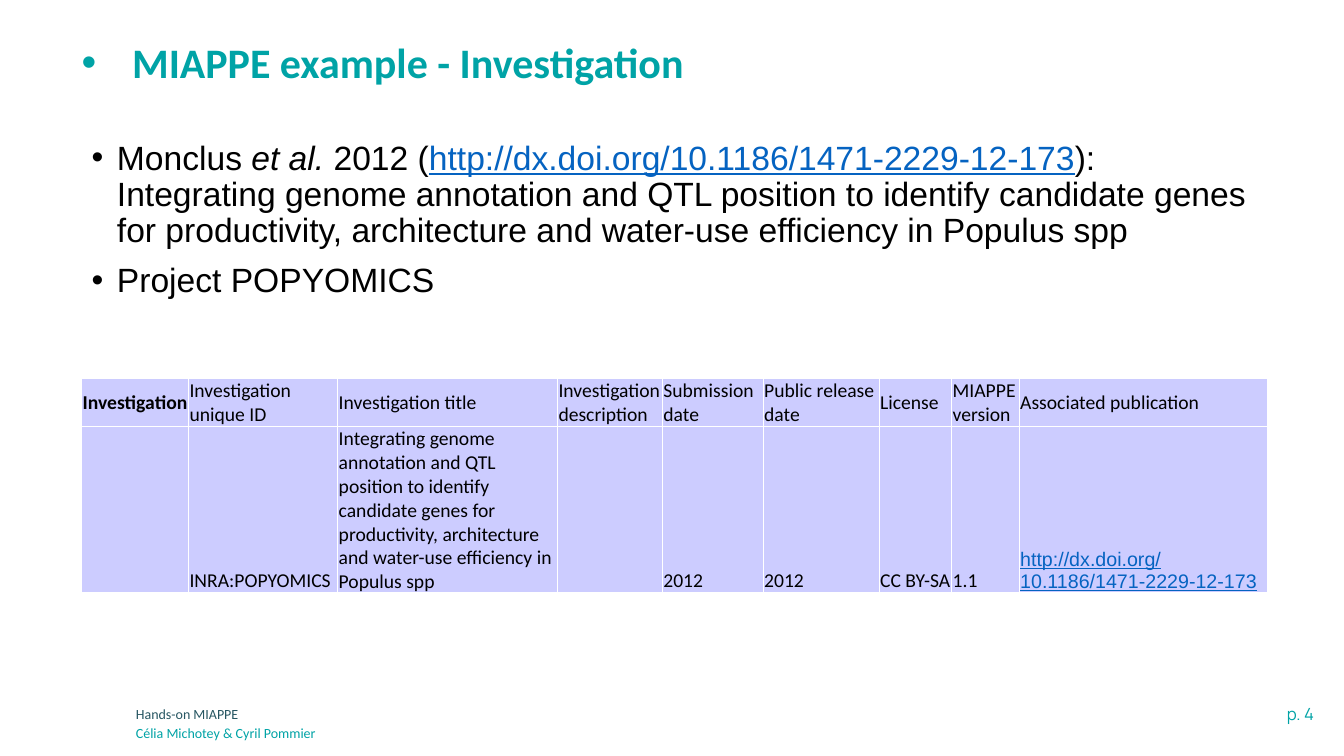
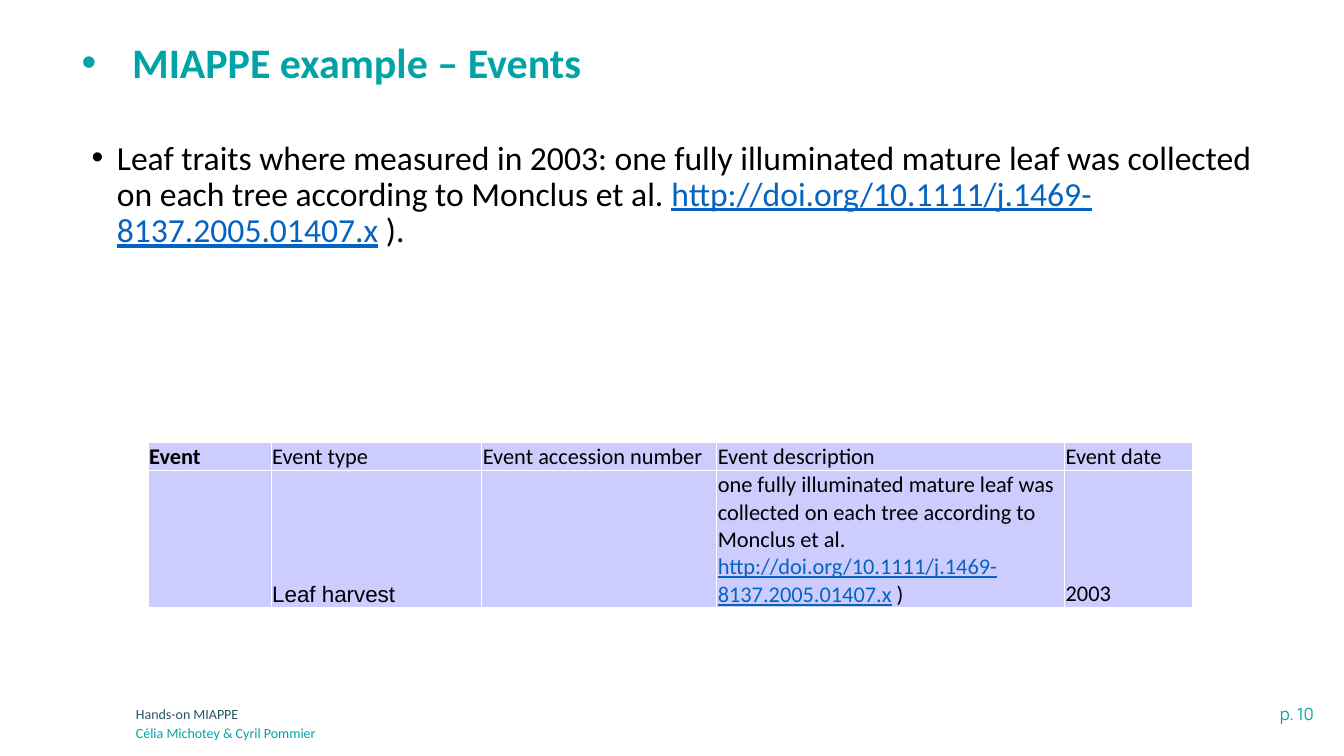
"""Build two slides showing MIAPPE metadata examples."""
from dataclasses import dataclass
from typing import Any

from pptx import Presentation
from pptx.dml.color import RGBColor
from pptx.enum.text import MSO_ANCHOR as Anchor, MSO_AUTO_SIZE as Auto, PP_ALIGN as Align
from pptx.oxml import parse_xml
from pptx.oxml.ns import nsdecls
from pptx.util import Inches, Pt

TEAL = RGBColor(0x00, 0xA3, 0xA6)
SLATE = RGBColor(0x27, 0x56, 0x62)
BLACK = RGBColor(0x00, 0x00, 0x00)
BLUE = RGBColor(0x05, 0x63, 0xC1)
LILAC = RGBColor(0xCC, 0xCC, 0xFF)
WHITE = RGBColor(0xFF, 0xFF, 0xFF)
SANS, ARIAL, PAGE = "Calibri", "Arial", "Manrope"


@dataclass(frozen=True)
class Run:
    """Hold a piece of text with its own look."""
    text: str
    font: str = SANS
    italic: bool = False
    link: bool = False


@dataclass(frozen=True)
class Label:
    """Hold a line of the footer."""
    text: str
    box: tuple[float, float, float, float]
    size: int
    font: str
    color: RGBColor
    align: Align = Align.LEFT


@dataclass(frozen=True)
class Grid:
    """Hold a table with its place and measures."""
    left: float
    top: float
    size: int
    cols: list[float]
    rows: list[float]
    heads: list[str]
    cells: list[list[Run]]


@dataclass(frozen=True)
class Page:
    """Hold the content of a slide."""
    number: int
    title: str
    points: list[list[Run]]
    grid: Grid


PAPER = ("Integrating genome annotation and QTL position to identify candidate genes for "
         "productivity, architecture and water-use efficiency in Populus spp")
DOI = "http://dx.doi.org/10.1186/1471-2229-12-173"
LEAF = "one fully illuminated mature leaf was collected on each tree according to Monclus et al. "
LEAF_DOI = Run("http://doi.org/10.1111/j.1469-8137.2005.01407.x", link=True)

FOOTER = [
    Label("Hands-on MIAPPE", (1.25, 6.95, 7.34, 0.28), 10, SANS, SLATE),
    Label("Célia Michotey & Cyril Pommier", (1.25, 7.14, 7.34, 0.28), 10, SANS, TEAL),
]
PAGES = [
    Page(4, "MIAPPE example - Investigation", [
        [Run("Monclus ", ARIAL), Run("et al. ", ARIAL, italic=True), Run("2012 (", ARIAL),
         Run(DOI, ARIAL, link=True), Run(f"): {PAPER}", ARIAL)],
        [Run("Project POPYOMICS", ARIAL)],
    ], Grid(
        0.81, 3.75, 14, [1.06, 1.48, 2.18, 1.04, 1, 1.15, 0.72, 0.67, 2.46], [0.47, 1.65],
        ["Investigation", "Investigation unique ID", "Investigation title",
         "Investigation description", "Submission date", "Public release date",
         "License", "MIAPPE version", "Associated publication"],
        [[], [Run("INRA:POPYOMICS")], [Run(PAPER)], [], [Run("2012")], [Run("2012")],
         [Run("CC BY-SA")], [Run("1.1")], [Run(DOI, ARIAL, link=True)]],
    )),
    Page(10, "MIAPPE example – Events", [
        [Run(f"Leaf traits where measured in 2003: {LEAF}"), LEAF_DOI, Run(" ).")],
    ], Grid(
        1.47, 4.39, 16, [1.22, 2.09, 2.33, 3.45, 1.27], [0.27, 1.36],
        ["Event", "Event type", "Event accession number", "Event description", "Event date"],
        [[], [Run("Leaf harvest", ARIAL)], [], [Run(LEAF), LEAF_DOI, Run(" )")],
         [Run("2003")]],
    )),
]


def apply(item: Any, look: dict[str, Any]) -> None:
    """Set attributes from a dict of format values."""
    for key, val in look.items():
        setattr(item, key, val)


def place(shape: Any, box: tuple[float, float, float, float]) -> None:
    """Move and size a shape in inches."""
    apply(shape, dict(zip(("left", "top", "width", "height"), map(Inches, box))))


def write(para: Any, text: str, color: RGBColor, **look: Any) -> None:
    """Add a run with its font values."""
    run = para.add_run()
    run.text = text
    apply(run.font, look)
    run.font.color.rgb = color


def fill(para: Any, runs: list[Run], size: int, bold: bool = False) -> None:
    """Write mixed runs into a paragraph."""
    for run in runs:
        write(para, run.text, BLUE if run.link else BLACK, name=run.font, size=Pt(size),
              bold=bold, italic=run.italic, underline=run.link)


def bullet(para: Any, indent: float, gap: int = 0) -> None:
    """Give a paragraph a hanging bullet."""
    props = para._p.get_or_add_pPr()
    props.set("marL", str(Inches(indent)))
    props.set("indent", str(-Inches(indent)))
    for tag in (f'buFont {nsdecls("a")} typeface="{ARIAL}"', f'buChar {nsdecls("a")} char="•"'):
        props.append(parse_xml(f"<a:{tag}/>"))
    apply(para, {"alignment": Align.LEFT, "line_spacing": 0.9, "space_before": Pt(gap)})


def draw_title(shape: Any, text: str) -> None:
    """Write the slide title."""
    place(shape, (0.81, 0.16, 11.76, 0.97))
    frame = shape.text_frame
    apply(frame, {"auto_size": Auto.NONE, "vertical_anchor": Anchor.MIDDLE, "margin_left": 0})
    para = frame.paragraphs[0]
    bullet(para, 0.5)
    write(para, text, TEAL, name=SANS, size=Pt(30), bold=True)


def draw_body(shape: Any, points: list[list[Run]]) -> None:
    """Write the bullet list."""
    place(shape, (0.81, 1.35, 11.76, 5.09))
    frame = shape.text_frame
    frame.auto_size = Auto.NONE
    for pos, runs in enumerate(points):
        para = frame.add_paragraph() if pos else frame.paragraphs[0]
        bullet(para, 0.25, 10 if pos else 0)
        fill(para, runs, 24)


def draw_label(slide: Any, label: Label) -> None:
    """Add a footer line."""
    shape = slide.shapes.add_textbox(*map(Inches, label.box))
    shape.text_frame.word_wrap = True
    para = shape.text_frame.paragraphs[0]
    para.alignment = label.align
    write(para, label.text, label.color, name=label.font, size=Pt(label.size))


def draw_cell(cell: Any, runs: list[Run], size: int, head: bool, bold: bool) -> None:
    """Format and fill a table cell."""
    edge = Inches(0.01)
    apply(cell, {"margin_left": edge, "margin_right": edge, "margin_top": edge,
                 "margin_bottom": 0,
                 "vertical_anchor": Anchor.MIDDLE if head else Anchor.BOTTOM})
    props = cell._tc.get_or_add_tcPr()
    for side in "LRTB":
        props.append(parse_xml(
            f'<a:ln{side} {nsdecls("a")} w="{Pt(1)}"><a:solidFill>'
            f'<a:srgbClr val="{WHITE}"/></a:solidFill></a:ln{side}>'))
    cell.fill.solid()
    cell.fill.fore_color.rgb = LILAC
    fill(cell.text_frame.paragraphs[0], runs, size, bold)


def draw_grid(slide: Any, grid: Grid) -> None:
    """Add the metadata table."""
    box = (grid.left, grid.top, sum(grid.cols), sum(grid.rows))
    table = slide.shapes.add_table(len(grid.rows), len(grid.cols), *map(Inches, box)).table
    apply(table, {"first_row": False, "horz_banding": False})
    for col, width in zip(table.columns, grid.cols):
        col.width = Inches(width)
    heads = [[Run(text)] for text in grid.heads]
    for row, (height, line) in enumerate(zip(grid.rows, (heads, grid.cells))):
        table.rows[row].height = Inches(height)
        for col, runs in enumerate(line):
            draw_cell(table.cell(row, col), runs, grid.size, row == 0, row == col == 0)


def draw_page(deck: Any, page: Page) -> None:
    """Add a whole slide."""
    slide = deck.slides.add_slide(deck.slide_layouts[1])
    number = Label(f"p. {page.number}", (10.85, 6.93, 2.28, 0.3), 12, PAGE, TEAL, Align.RIGHT)
    for label in [number, *FOOTER]:
        draw_label(slide, label)
    draw_title(slide.shapes.title, page.title)
    draw_body(slide.placeholders[1], page.points)
    draw_grid(slide, page.grid)


def main() -> None:
    """Build and save the deck."""
    deck = Presentation()
    apply(deck, {"slide_width": Inches(13.33), "slide_height": Inches(7.5)})
    for page in PAGES:
        draw_page(deck, page)
    deck.save("out.pptx")


if __name__ == "__main__":
    main()
